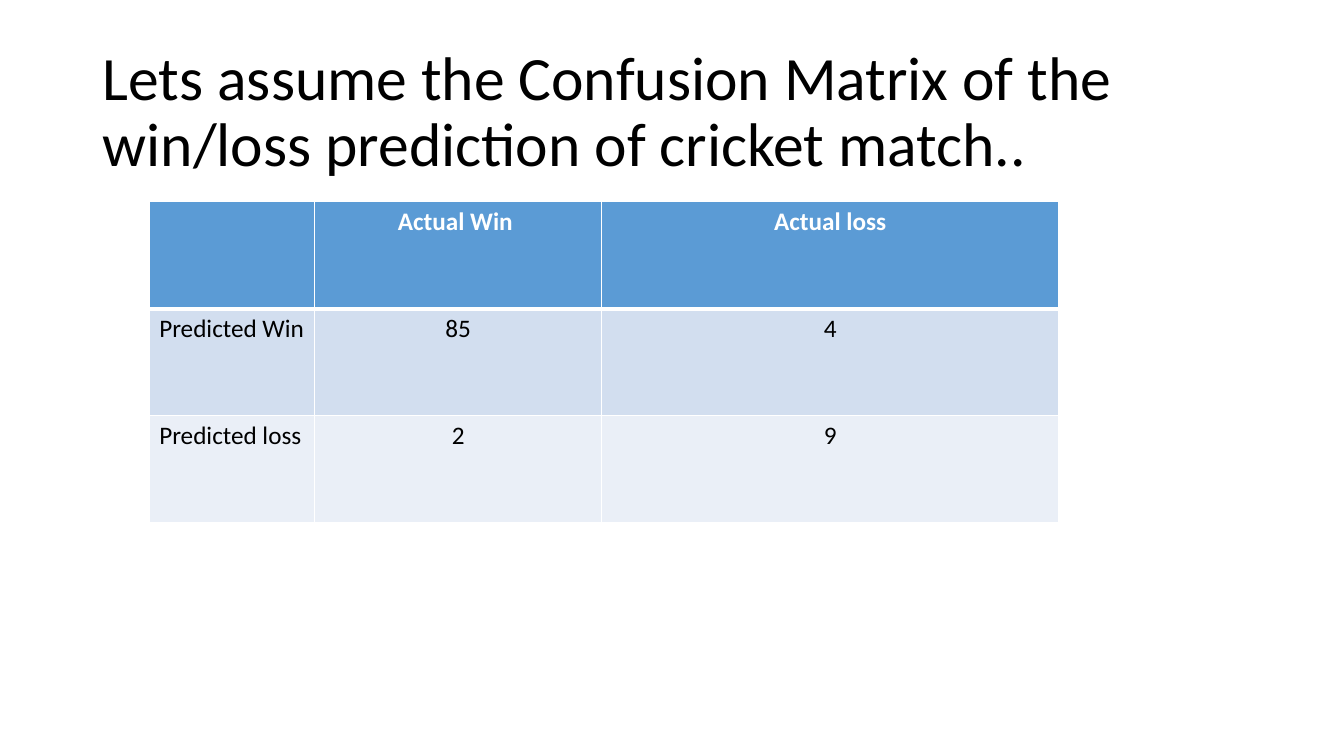
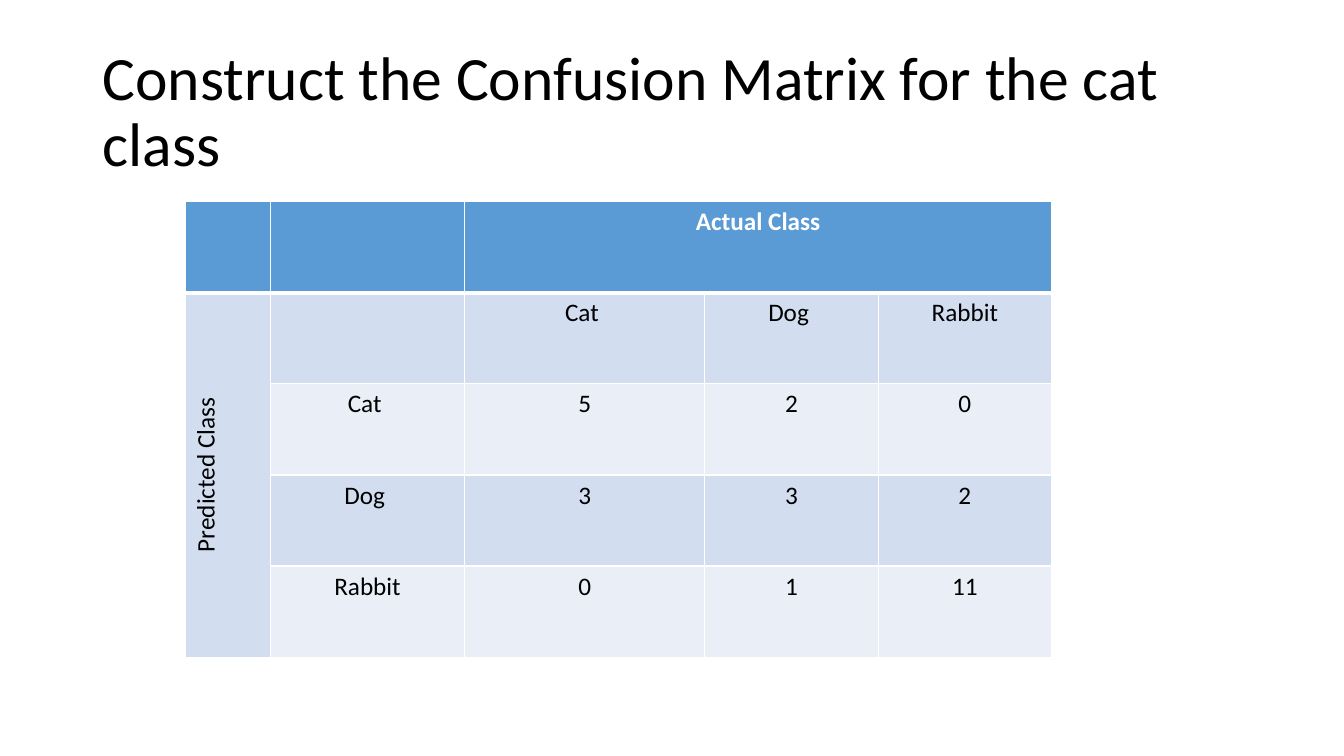
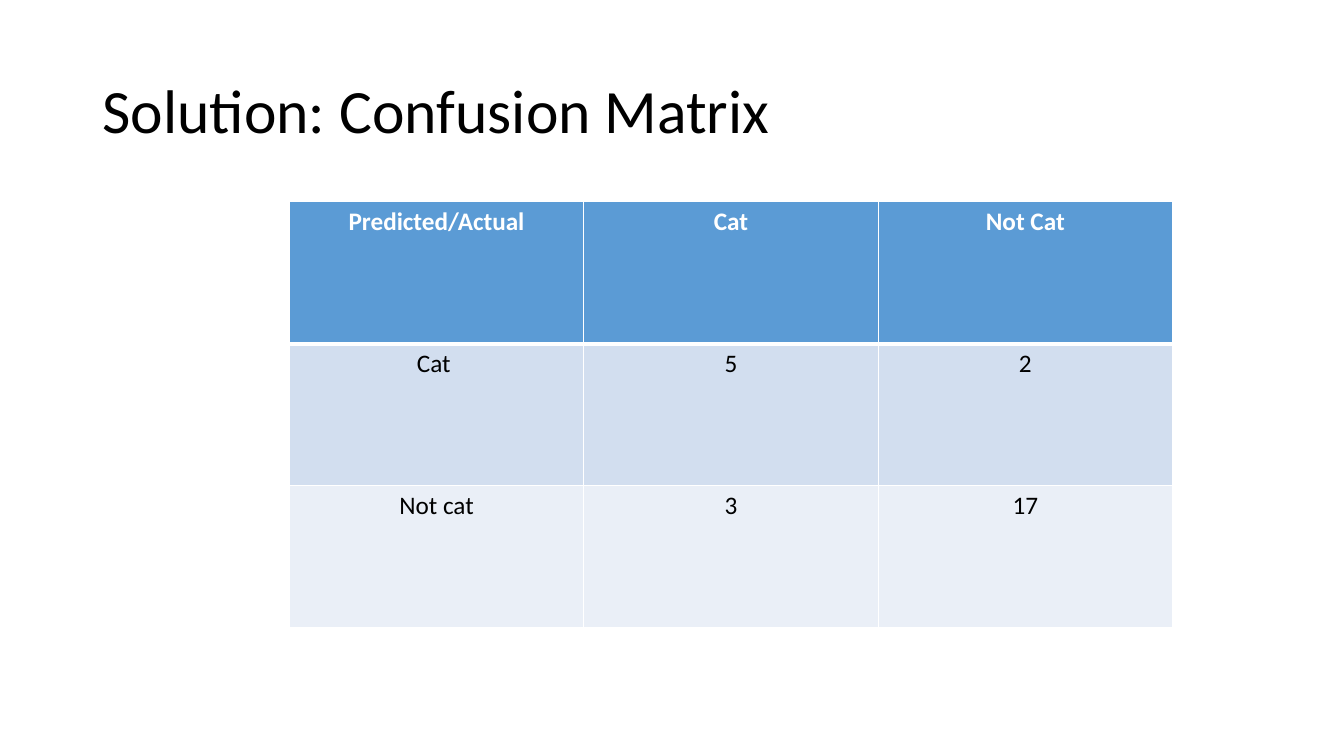
import pptx
import pptx.util
import pptx.dml.color
import pptx.enum.text
import pptx.oxml
import pptx.oxml.ns

Inches = pptx.util.Inches
Pt = pptx.util.Pt
Color = pptx.dml.color.RGBColor
Align = pptx.enum.text.PP_ALIGN

# Shared style
BLACK = Color(0x00, 0x00, 0x00)
WHITE = Color(0xFF, 0xFF, 0xFF)
BLUE = Color(0x5B, 0x9B, 0xD5)
BANDS = [Color(0xEA, 0xEF, 0xF7), Color(0xD2, 0xDE, 0xEF)]
FONT = "Calibri"
TOP = 2  # upper edge of every table


def write(frame, text, size=18, color=BLACK, bold=False,
          align=Align.CENTER, gap=1.0):
    para = frame.paragraphs[0]
    para.alignment = align
    para.line_spacing = gap
    run = para.add_run()
    run.text = text
    run.font.name = FONT
    run.font.size = Pt(size)
    run.font.bold = bold
    run.font.color.rgb = color


def border(cell, **widths):
    props = cell._tc.get_or_add_tcPr()
    for side in "LRTB":
        props.append(pptx.oxml.parse_xml(
            f'<a:ln{side} {pptx.oxml.ns.nsdecls("a")} w="{Pt(widths.get(side, 1))}">'
            f'<a:solidFill><a:srgbClr val="{WHITE}"/></a:solidFill></a:ln{side}>'))


# Slide content: spans hold first and last cell of each merge
slides = [
    dict(title="Lets assume the Confusion Matrix of the win/loss "
               "prediction of cricket match..",
         left=1.48, cols=[1.64, 2.85, 4.53], high=3.19,
         lead=Align.LEFT, spans=[],
         rows=[["", "Actual Win ", "Actual loss"],
               ["Predicted Win", "85", "4"],
               ["Predicted loss", "2", "9"]]),
    dict(title="Construct the Confusion Matrix for the cat class",
         left=1.84, cols=[0.84, 1.93, 2.38, 1.72, 1.72], high=4.52,
         lead=Align.CENTER, spans=[((0, 2), (0, 4)), ((1, 0), (4, 0))],
         rows=[["", "", "Actual Class", "", ""],
               ["Predicted Class", "", "Cat ", "Dog ", "Rabbit"],
               ["", "Cat ", "5", "2", "0"],
               ["", "Dog ", "3", "3", "2"],
               ["", "Rabbit", "0", "1", "11"]]),
    dict(title="Solution: Confusion Matrix",
         left=2.87, cols=[2.92] * 3, high=4.23,
         lead=Align.CENTER, spans=[],
         rows=[["Predicted/Actual", "Cat", "Not Cat"],
               ["Cat ", "5", "2"],
               ["Not cat", "3", "17"]]),
]

deck = pptx.Presentation()
deck.slide_width = Inches(13.33)
deck.slide_height = Inches(7.5)

for item in slides:
    slide = deck.slides.add_slide(deck.slide_layouts[6])

    # Title
    box = slide.shapes.add_textbox(Inches(0.92), Inches(0.4),
                                   Inches(11.5), Inches(1.45))
    frame = box.text_frame
    frame.word_wrap = True
    frame.vertical_anchor = pptx.enum.text.MSO_ANCHOR.MIDDLE
    write(frame, item["title"], size=44, align=Align.LEFT, gap=0.9)

    # Table grid
    rows, cols = item["rows"], item["cols"]
    table = slide.shapes.add_table(
        len(rows), len(cols), Inches(item["left"]), Inches(TOP),
        Inches(sum(cols)), Inches(item["high"])).table
    for col, width in zip(table.columns, cols):
        col.width = Inches(width)

    # Cells
    for r, row in enumerate(rows):
        head = r == 0
        for c, text in enumerate(row):
            cell = table.cell(r, c)
            border(cell, T=3 if r == 1 else 1, B=3 if head else 1)
            cell.fill.solid()
            cell.fill.fore_color.rgb = BLUE if head else BANDS[r % 2]
            if text:
                write(cell.text_frame, text, bold=head,
                      color=WHITE if head else BLACK,
                      align=item["lead"] if c == 0 else Align.CENTER)

    # Merged cells, with upright text in those that run down
    for start, end in item["spans"]:
        cell = table.cell(*start)
        cell.merge(table.cell(*end))
        if end[0] > start[0]:
            cell._tc.get_or_add_tcPr().set("vert", "vert270")

deck.save("out.pptx")
